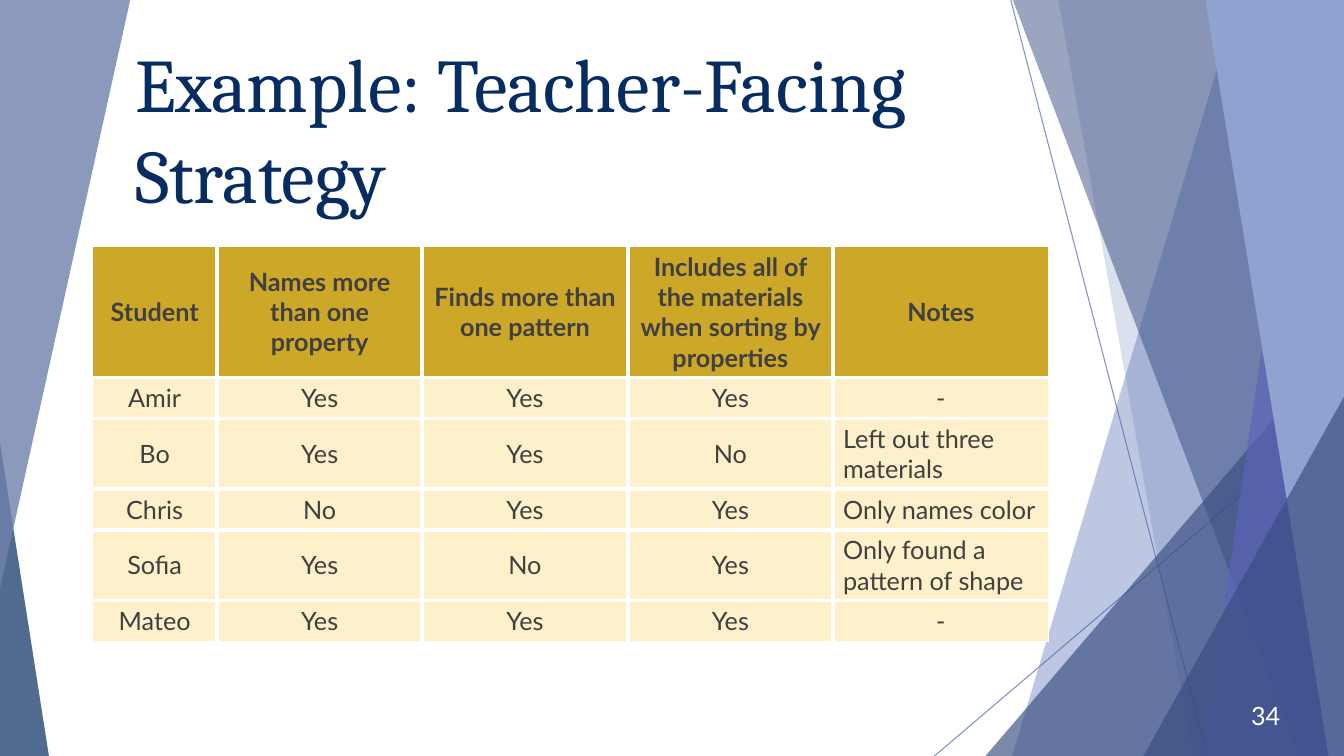
from lxml.etree import SubElement
from pptx import Presentation
from pptx.dml.color import RGBColor
from pptx.enum.shapes import MSO_CONNECTOR, MSO_SHAPE
from pptx.enum.text import MSO_ANCHOR, MSO_AUTO_SIZE, PP_ALIGN
from pptx.oxml.ns import qn
from pptx.util import Pt

NAVY = RGBColor(0x07, 0x2C, 0x62)
BLUE = RGBColor(0x4A, 0x66, 0xAC)
DEEP = RGBColor(0x38, 0x4C, 0x81)
VIOLET = RGBColor(0x5C, 0x64, 0xB7)
SKY = RGBColor(0x90, 0xA2, 0xCF)
STEEL = RGBColor(0x6F, 0x81, 0xAC)
GOLD = RGBColor(0xCD, 0xA7, 0x28)
CREAM = RGBColor(0xFE, 0xF0, 0xCA)
GRAY = RGBColor(0x40, 0x40, 0x40)
WHITE = RGBColor(0xFF, 0xFF, 0xFF)


def fade(shape, alpha):
    """Set the opacity, in percent, of the shape's colour."""
    color = next(shape._element.iter(qn("a:srgbClr")))
    SubElement(color, qn("a:alpha"), val=str(alpha * 1000))


def edge(cell, side, width):
    """Draw a white border on one side (L, R, T or B) of a cell."""
    line = SubElement(cell._tc.get_or_add_tcPr(), qn("a:ln" + side), w=str(Pt(width)))
    fill = SubElement(line, qn("a:solidFill"))
    SubElement(fill, qn("a:srgbClr"), val=str(WHITE))


deck = Presentation()
deck.slide_width, deck.slide_height = Pt(960), Pt(540)
slide = deck.slides.add_slide(deck.slide_layouts[5])
shapes = slide.shapes

# Thin lines behind the panels
for ends in [(722, 0, 862.5, 540), (960, 291, 667.5, 540)]:
    line = shapes.add_connector(MSO_CONNECTOR.STRAIGHT, *map(Pt, ends))
    line.line.color.rgb = BLUE
    line.line.width = Pt(0.75)
    fade(line, 70)
    SubElement(line._element.spPr, qn("a:effectLst"))

# Right-hand panels run from a top x to a bottom x and reach the slide's edge;
# triangles have a box and a peak at its left (0) or right (1)
panels = [
    (BLUE, 36, (884, 723), None),
    (BLUE, 20, (756, 852), None),
    (DEEP, 66, (703.5, 240.5, 256.5, 300), 1),
    (DEEP, 50, (723.5, 928), None),
    (VIOLET, 70, (938, 858.5), None),
    (SKY, 100, (861, 949), None),
    (DEEP, 66, (816.5, 283.5, 143.5, 257), 1),
    (NAVY, 70, (0, 316.5, 35, 224), 0),
    (STEEL, 80, (0, 0, 93, 420.5), 0),
]
for color, alpha, place, peak in panels:
    if peak is None:
        top, foot = place
        form = shapes.build_freeform(Pt(top), 0)
        form.add_line_segments(
            [(Pt(960), 0), (Pt(960), Pt(540)), (Pt(foot), Pt(540))])
        panel = form.convert_to_shape()
    else:
        panel = shapes.add_shape(MSO_SHAPE.ISOSCELES_TRIANGLE, *map(Pt, place))
        panel.adjustments[0] = peak
    panel.shadow.inherit = False
    panel.fill.solid()
    panel.fill.fore_color.rgb = color
    panel.line.fill.background()
    fade(panel, alpha)
# The last triangle points down
panel._element.spPr.find(qn("a:xfrm")).set("flipV", "1")

title = shapes.title
title.left, title.top, title.width, title.height = Pt(89.3), Pt(23), Pt(708), Pt(104)
shapes._spTree.append(title._element)
frame = title.text_frame
frame.text = "Example: Teacher-Facing Strategy"
frame.word_wrap = True
frame.auto_size = MSO_AUTO_SIZE.NONE
frame.vertical_anchor = MSO_ANCHOR.TOP
para = frame.paragraphs[0]
para.alignment = PP_ALIGN.LEFT
para.font.name, para.font.size = "Cambria", Pt(54)
para.font.color.rgb = NAVY

rows = [
    ("Student", "Names more than one property", "Finds more than one pattern",
     "Includes all of the materials when sorting by properties", "Notes"),
    ("Amir", "Yes", "Yes", "Yes", "-"),
    ("Bo", "Yes", "Yes", "No", "Left out three materials"),
    ("Chris", "No", "Yes", "Yes", "Only names color"),
    ("Sofia", "Yes", "No", "Yes", "Only found a pattern of shape"),
    ("Mateo", "Yes", "Yes", "Yes", "-"),
]
widths = [89, 146.7, 146.7, 146.7, 154]
last_row, last_col = len(rows) - 1, len(widths) - 1
grid = shapes.add_table(len(rows), len(widths), Pt(66), Pt(176), Pt(683), Pt(282)).table
for col, width in zip(grid.columns, widths):
    col.width = Pt(width)
for r, row in enumerate(rows):
    grid.rows[r].height = Pt(29.2)
    for c, text in enumerate(row):
        cell = grid.cell(r, c)
        outer = {"L": c == 0, "R": c == last_col, "T": r == 0, "B": r == last_row}
        for side, rim in outer.items():
            edge(cell, side, 1 if rim else 3)
        cell.fill.solid()
        cell.fill.fore_color.rgb = CREAM if r else GOLD
        cell.vertical_anchor = MSO_ANCHOR.MIDDLE
        cell.text = text
        para = cell.text_frame.paragraphs[0]
        note = r > 0 and c == last_col and text != "-"
        para.alignment = PP_ALIGN.LEFT if note else PP_ALIGN.CENTER
        para.font.name, para.font.size = "Lato", Pt(18)
        para.font.bold = r == 0
        para.font.color.rgb = GRAY

number = shapes.add_textbox(Pt(867.6), Pt(497), Pt(54), Pt(29)).text_frame
number.word_wrap = True
number.text = "34"
para = number.paragraphs[0]
para.alignment = PP_ALIGN.RIGHT
para.font.name, para.font.size = "Lato", Pt(18)
para.font.color.rgb = WHITE

deck.save("out.pptx")
